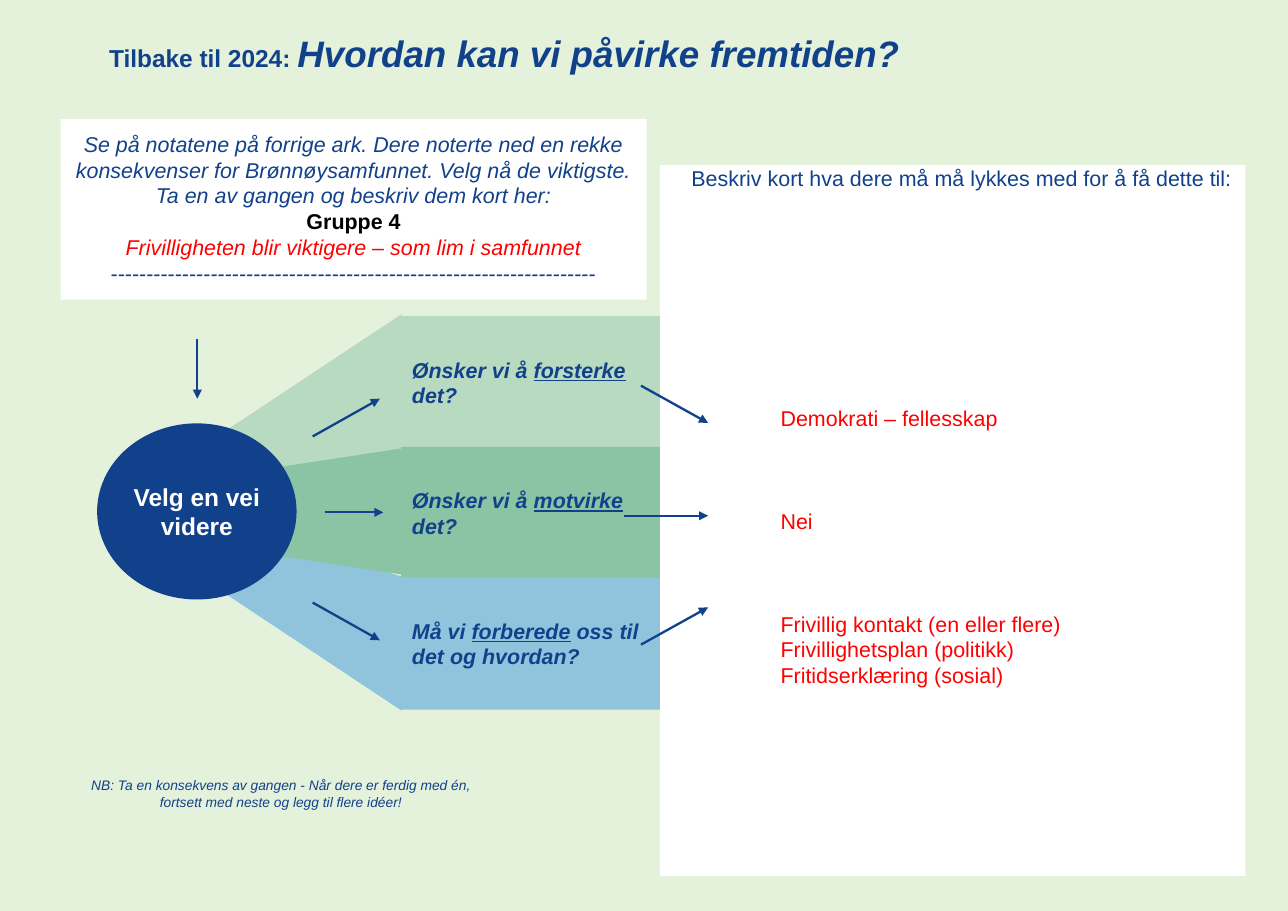
from lxml.etree import SubElement
from pptx import Presentation
from pptx.dml.color import RGBColor
from pptx.enum.shapes import MSO_CONNECTOR, MSO_SHAPE
from pptx.enum.text import MSO_ANCHOR, PP_ALIGN
from pptx.oxml.ns import qn
from pptx.util import Cm, Pt

NAVY = RGBColor(0x12, 0x41, 0x8B)
RED = RGBColor(0xFF, 0, 0)
BLACK = RGBColor(0, 0, 0)
WHITE = RGBColor(0xFF, 0xFF, 0xFF)
PALE = RGBColor(0xE4, 0xF1, 0xDB)
MINT = RGBColor(0xB8, 0xDA, 0xC0)
GREEN = RGBColor(0x8B, 0xC3, 0xA5)
BLUE = RGBColor(0x90, 0xC4, 0xDD)

# Text styles
BODY = dict(name="Arial", size=Pt(14), color=NAVY)
NOTE = BODY | dict(size=Pt(9), italic=True)
HEAD = BODY | dict(size=Pt(16), bold=True)
TITLE = HEAD | dict(size=Pt(24), italic=True)
HUB = HEAD | dict(color=WHITE)
TASK = BODY | dict(italic=True)
GROUP = BODY | dict(bold=True, color=BLACK)
PICK = TASK | dict(color=RED)
REPLY = BODY | dict(color=RED)
ASK = BODY | dict(bold=True, italic=True)
KEY = ASK | dict(underline=True)

# Content: each line is a list of (words, style)
title = [[("Tilbake til 2024: ", HEAD), ("Hvordan kan vi påvirke fremtiden?", TITLE)]]
task = [
    [("Se på notatene på forrige ark. Dere noterte ned en rekke konsekvenser for "
      "Brønnøysamfunnet. Velg nå de viktigste. Ta en av gangen og beskriv dem kort her:", TASK)],
    [("Gruppe 4", GROUP)],
    [("Frivilligheten blir viktigere – som lim i samfunnet", PICK)],
    [("--------------------------------------------------------------------", TASK)],
]
hub = [[("Velg en vei videre", HUB)]]
prompt = [[("Beskriv kort hva dere må må lykkes med for å få dette til:", BODY)]]
replies = [[(words, REPLY)] for words in (
    "Demokrati – fellesskap",
    "Nei",
    "Frivillig kontakt (en eller flere)",
    "Frivillighetsplan (politikk)",
    "Fritidserklæring (sosial)",
)]
note = [[(words, NOTE)] for words in (
    "NB: Ta en konsekvens av gangen - Når dere er ferdig med én,",
    "fortsett med neste og legg til flere idéer!",
)]
paths = [
    ("Ønsker vi å ", "forsterke", " det?", MINT),
    ("Ønsker vi å ", "motvirke", " det?", GREEN),
    ("Må vi ", "forberede", " oss til det og hvordan?", BLUE),
]
# Fans: centre x, centre y, turn, colour
fans = [
    (7.7, 14.0, 294.9, BLUE),
    (7.7, 9.62, 245.1, MINT),
    (7.16, 11.79, 270, GREEN),
]
# Arrows: start x, start y, end x, end y
arrows = [
    (4.55, 7.82, 4.55, 9.19),
    (7.21, 10.06, 8.76, 9.19),
    (7.49, 11.81, 8.84, 11.81),
    (7.21, 13.89, 8.76, 14.76),
    (14.78, 8.89, 16.33, 9.75),
    (14.38, 11.89, 16.33, 11.89),
    (14.78, 14.86, 16.33, 14.0),
]

deck = Presentation()
deck.slide_width, deck.slide_height = Cm(29.7), Cm(21)
slide = deck.slides.add_slide(deck.slide_layouts[6])
slide.background.fill.solid()
slide.background.fill.fore_color.rgb = PALE


def write(shape, lines, align=PP_ALIGN.LEFT, anchor=MSO_ANCHOR.TOP,
          pad=(0.25, 0.25, 0.25, 0.25), gaps=None):
    frame = shape.text_frame
    form = dict(zip(("margin_left", "margin_top", "margin_right", "margin_bottom"), map(Cm, pad)))
    form |= dict(word_wrap=True, vertical_anchor=anchor)
    for key, value in form.items():
        setattr(frame, key, value)
    for row, line in enumerate(lines):
        para = frame.add_paragraph() if row else frame.paragraphs[0]
        para.alignment = align
        if gaps and row in gaps:
            para.space_before = gaps[row]
        for words, style in line:
            run = para.add_run()
            run.text = words
            for key, value in style.items():
                if key == "color":
                    run.font.color.rgb = value
                else:
                    setattr(run.font, key, value)


def draw(kind, x, y, w, h, fill):
    shape = slide.shapes.add_shape(kind, Cm(x), Cm(y), Cm(w), Cm(h))
    shape.shadow.inherit = False
    shape.fill.solid()
    shape.fill.fore_color.rgb = fill
    shape.line.fill.background()
    return shape


def label(x, y, w, h, lines, **form):
    write(slide.shapes.add_textbox(Cm(x), Cm(y), Cm(w), Cm(h)), lines, **form)


# Reply panel
panel = draw(MSO_SHAPE.RECTANGLE, 15.21, 3.81, 13.51, 16.38, WHITE)
write(panel, replies, anchor=MSO_ANCHOR.MIDDLE, pad=(2.79, 1.44, 0.25, 0.25),
      gaps={1: Pt(50.5), 2: Pt(50.5)})

# Fans from the hub to the paths
FAN_W, FAN_H = 3.0, 4.82
for mid_x, mid_y, turn, fill in fans:
    fan = draw(MSO_SHAPE.TRAPEZOID, mid_x - FAN_W / 2, mid_y - FAN_H / 2, FAN_W, FAN_H, fill)
    fan.adjustments[0] = 0.244
    fan.rotation = turn

# Hub
write(draw(MSO_SHAPE.OVAL, 2.24, 9.76, 4.6, 4.06, NAVY), hub,
      align=PP_ALIGN.CENTER, anchor=MSO_ANCHOR.MIDDLE, pad=(0, 0, 0, 0))

# Three paths
for row, (start, key, end, fill) in enumerate(paths):
    band = draw(MSO_SHAPE.RECTANGLE, 9.25, 7.29 + 3.01 * row, 5.97, 3.05, fill)
    write(band, [[(start, ASK), (key, KEY), (end, ASK)]], anchor=MSO_ANCHOR.MIDDLE)

# Headings and notes
WIDE = (0.28, 0.28, 0.28, 0.28)
label(15.27, 3.56, 13.82, 1.12, prompt, align=PP_ALIGN.CENTER)
label(1.7, 17.63, 9.55, 1.35, note, align=PP_ALIGN.CENTER, pad=WIDE)
label(2.24, 0.43, 21.74, 1.6, title, pad=WIDE)
write(draw(MSO_SHAPE.RECTANGLE, 1.4, 2.74, 13.51, 4.17, WHITE), task,
      align=PP_ALIGN.CENTER, pad=WIDE)

# Arrows
for ends in arrows:
    arrow = slide.shapes.add_connector(MSO_CONNECTOR.STRAIGHT, *map(Cm, ends))
    arrow.line.color.rgb = NAVY
    arrow.line.width = Pt(1.5)
    SubElement(arrow.line._get_or_add_ln(), qn("a:tailEnd"), type="triangle")
    SubElement(arrow._element.spPr, qn("a:effectLst"))

deck.save("out.pptx")
